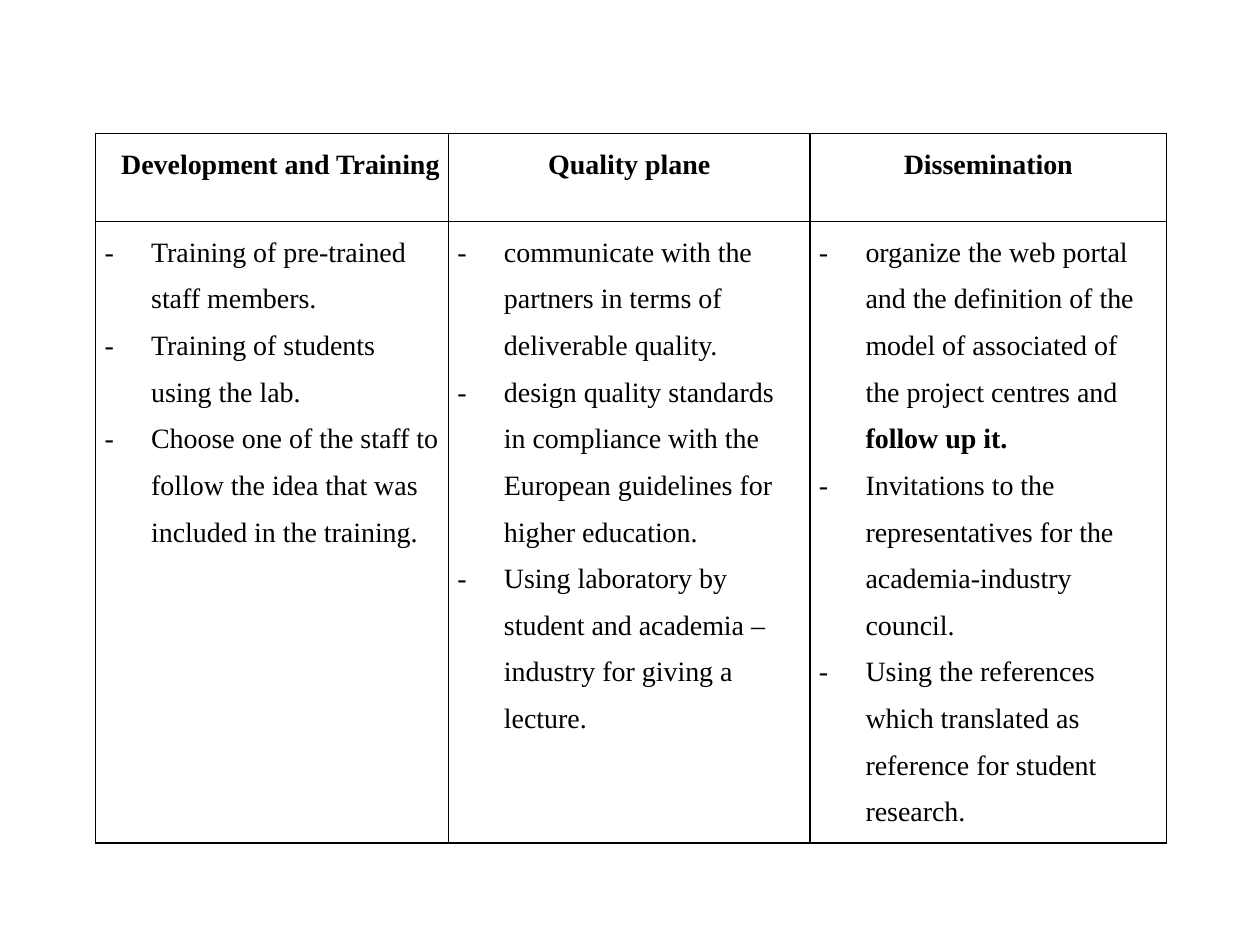
from lxml import etree
from pptx import Presentation
from pptx.dml.color import RGBColor
from pptx.enum import text
from pptx.oxml.ns import qn
from pptx.util import Inches, Pt

ALIGN = text.PP_ALIGN
THEME = {"font": "Times New Roman", "size": Pt(16), "ink": "000000",
         "line": Pt(1), "space": 1.5, "pad": Inches(0.07), "hang": Inches(0.37)}

# Each column: heading, its alignment, width, bullets.
# A bullet is a list of (words, bold) runs.
COLS = [
    ("Development and Training", ALIGN.RIGHT, 2.8, [
        [("Training of pre-trained staff members.", False)],
        [("Training of students using the lab.", False)],
        [("Choose one of the staff to follow the idea that was included "
          "in the training.", False)],
    ]),
    ("Quality plane", ALIGN.CENTER, 2.87, [
        [("communicate with the partners in terms of deliverable quality.", False)],
        [("design quality standards in compliance with the European "
          "guidelines for higher education.", False)],
        [("Using laboratory by student and academia – industry for giving "
          "a lecture.", False)],
    ]),
    ("Dissemination", ALIGN.CENTER, 2.83, [
        [("organize the web portal and the definition of the model of "
          "associated of the project centres and ", False), ("follow up it.", True)],
        [("Invitations to the representatives for the academia-industry "
          "council.", False)],
        [("Using the references which translated as reference for student "
          "research.", False)],
    ]),
]
ROWS = [0.7, 4.93]
LEFT, TOP = 0.76, 1.06


def frame(cell):
    """Clear the fill, set the margins and rule all four sides."""
    cell.fill.background()
    cell.margin_left = cell.margin_right = THEME["pad"]
    cell.margin_top = cell.margin_bottom = 0
    props = cell._tc.get_or_add_tcPr()
    for i, side in enumerate("LRTB"):
        line = etree.Element(qn("a:ln" + side), w=str(THEME["line"]))
        fill = etree.SubElement(line, qn("a:solidFill"))
        etree.SubElement(fill, qn("a:srgbClr"), val=THEME["ink"])
        props.insert(i, line)


def write(para, runs, align):
    para.alignment = align
    para.line_spacing = THEME["space"]
    for words, bold in runs:
        run = para.add_run()
        run.text = words
        font = run.font
        font.name, font.size, font.bold = THEME["font"], THEME["size"], bold
        font.color.rgb = RGBColor.from_string(THEME["ink"])


def add_dash(para):
    props = para._p.get_or_add_pPr()
    props.set("marL", str(THEME["hang"]))
    props.set("indent", str(-THEME["hang"]))
    etree.SubElement(props, qn("a:buFont"), typeface=THEME["font"])
    etree.SubElement(props, qn("a:buChar"), char="-")


def main():
    deck = Presentation()
    deck.slide_width, deck.slide_height = Inches(10), Inches(7.5)
    slide = deck.slides.add_slide(deck.slide_layouts[6])
    wide = sum(col[2] for col in COLS)
    table = slide.shapes.add_table(
        len(ROWS), len(COLS), Inches(LEFT), Inches(TOP),
        Inches(wide), Inches(sum(ROWS))).table
    table.first_row = table.horz_banding = False
    for row, high in zip(table.rows, ROWS):
        row.height = Inches(high)
    for c, (head, align, width, items) in enumerate(COLS):
        table.columns[c].width = Inches(width)
        top, body = table.cell(0, c), table.cell(1, c)
        frame(top)
        frame(body)
        write(top.text_frame.paragraphs[0], [(head, True)], align)
        for i, runs in enumerate(items):
            box = body.text_frame
            para = box.add_paragraph() if i else box.paragraphs[0]
            write(para, runs, ALIGN.LEFT)
            add_dash(para)
    deck.save("out.pptx")


if __name__ == "__main__":
    main()
